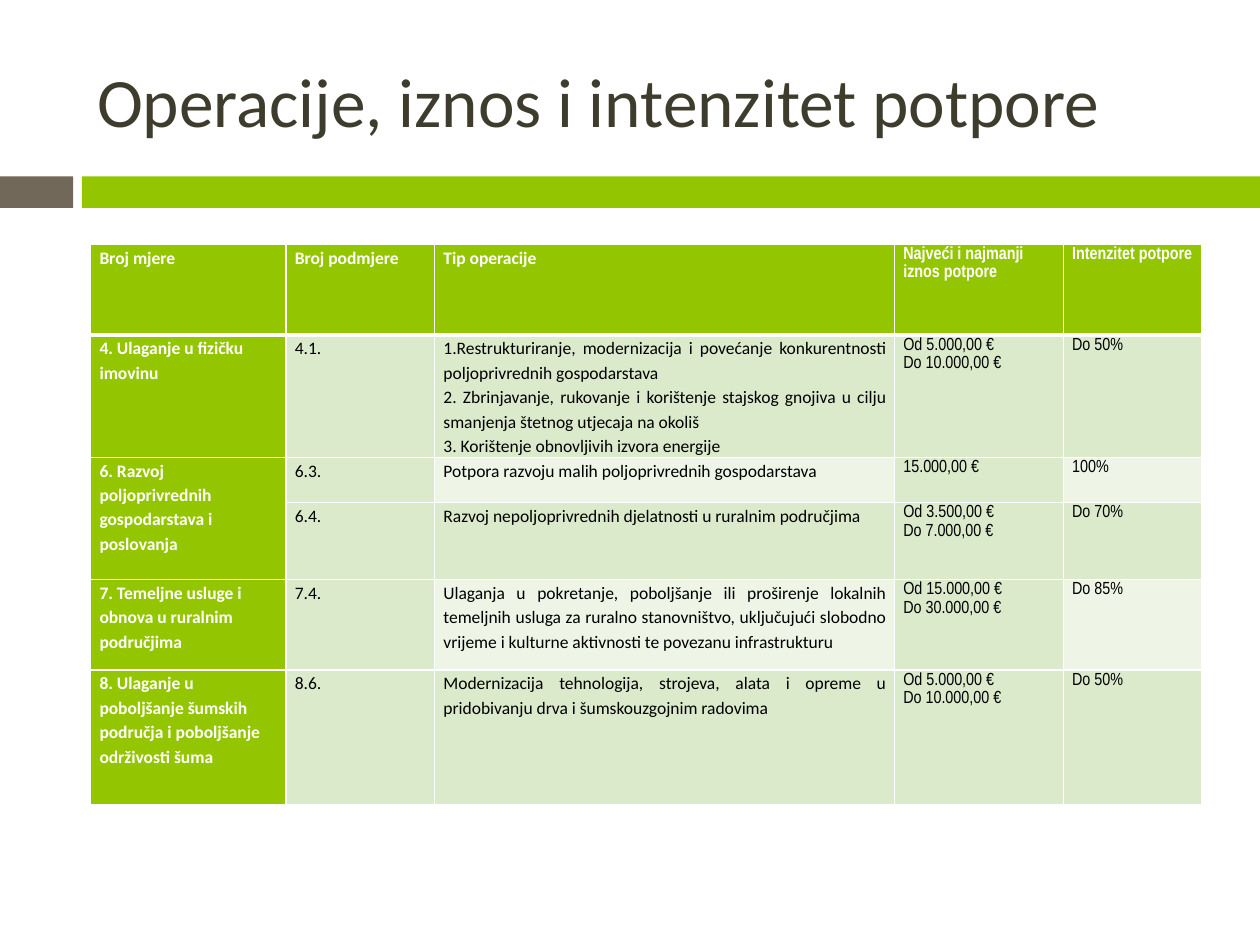
from lxml.etree import SubElement
from pptx import Presentation
from pptx.dml.color import RGBColor
from pptx.enum.shapes import MSO_SHAPE
from pptx.enum.text import MSO_ANCHOR, PP_ALIGN
from pptx.oxml.ns import qn
from pptx.util import Inches, Pt

COLORS = {"green": "94C600", "brown": "71685A", "title": "3E3D2D", "white": "FFFFFF",
          "black": "000000", "band": "DCEACC", "light": "EEF5E7"}
TITLE = "Operacije, iznos i intenzitet potpore"
BARS = [(0, 0.58, "brown"), (0.65, 9.35, "green")]
COLS = [1.55, 1.18, 3.65, 1.34, 1.1]
HEIGHTS = [0.72, 0.97, 0.36, 0.61, 0.72, 1.07]
ROWS = [
    ["Broj mjere", "Broj podmjere", "Tip operacije", "Najveći i najmanji iznos potpore",
     "Intenzitet potpore"],
    ["4. Ulaganje u fizičku imovinu", "4.1.",
     "1.Restrukturiranje, modernizacija i povećanje konkurentnosti poljoprivrednih gospodarstava\n"
     "2. Zbrinjavanje, rukovanje i korištenje stajskog gnojiva u cilju smanjenja štetnog utjecaja "
     "na okoliš\n3. Korištenje obnovljivih izvora energije",
     "Od 5.000,00 €\nDo 10.000,00 €", "Do 50%"],
    ["6. Razvoj poljoprivrednih gospodarstava i poslovanja", "6.3.",
     "Potpora razvoju malih poljoprivrednih gospodarstava", "15.000,00 €", "100%"],
    [None, "6.4.", "Razvoj nepoljoprivrednih djelatnosti u ruralnim područjima",
     "Od 3.500,00 €\nDo 7.000,00 €", "Do 70%"],
    ["7. Temeljne usluge i obnova u ruralnim područjima", "7.4.",
     "Ulaganja u pokretanje, poboljšanje ili proširenje lokalnih temeljnih usluga za ruralno "
     "stanovništvo, uključujući slobodno vrijeme i kulturne aktivnosti te povezanu infrastrukturu",
     "Od 15.000,00 €\nDo 30.000,00 €", "Do 85%"],
    ["8. Ulaganje u poboljšanje šumskih područja i poboljšanje održivosti šuma", "8.6.",
     "Modernizacija tehnologija, strojeva, alata i opreme u pridobivanju drva i "
     "šumskouzgojnim radovima",
     "Od 5.000,00 €\nDo 10.000,00 €", "Do 50%"],
]
LIGHT_ROWS, LIGHT_COLS = (2, 4), (2, 4)


def rgb(name):
    return RGBColor.from_string(COLORS[name])


def set_font(p, name, size, color, bold=False):
    p.font.name, p.font.size, p.font.bold = name, Pt(size), bold
    p.font.color.rgb = rgb(color)


def set_borders(cell, top, bottom):
    tcPr = cell._tc.get_or_add_tcPr()
    for side, width in (("L", 1), ("R", 1), ("T", top), ("B", bottom)):
        ln = SubElement(tcPr, qn(f"a:ln{side}"), w=str(Pt(width)))
        SubElement(SubElement(ln, qn("a:solidFill")), qn("a:srgbClr"), val=COLORS["white"])


def fill_cell(cell, row, col, text):
    head = row == 0 or col == 0
    set_borders(cell, 3 if row == 1 else 1, 3 if row == 0 else 1)
    light = row in LIGHT_ROWS and col in LIGHT_COLS
    cell.fill.solid()
    cell.fill.fore_color.rgb = rgb("green" if head else "light" if light else "band")
    cell.margin_left = cell.margin_right = Inches(0.07)
    cell.margin_top = cell.margin_bottom = 0
    if text is None:
        return
    cell.text_frame.text = text
    ragged = (col == 0 and row > 0) or (row == 0 and col > 2)
    for p in cell.text_frame.paragraphs:
        p.alignment = PP_ALIGN.LEFT if ragged else PP_ALIGN.JUSTIFY
        p.line_spacing = 1.15
        set_font(p, "Arial Narrow" if col > 2 else "Calibri", 10,
                 "white" if head else "black", head)


def main():
    """Build the slide on support operations, amounts and intensity."""
    prs = Presentation()
    prs.slide_width, prs.slide_height = Inches(10), Inches(7.5)
    s = prs.slides.add_slide(prs.slide_layouts[5])

    title = s.shapes.title
    title.left, title.top, title.width, title.height = map(Inches, (0.67, 0.25, 8.92, 1.08))
    tf = title.text_frame
    tf.text = TITLE
    tf.vertical_anchor = MSO_ANCHOR.MIDDLE
    tf.paragraphs[0].alignment = PP_ALIGN.LEFT
    set_font(tf.paragraphs[0], "Calibri", 39.6, "title")

    for left, width, color in BARS:
        bar = s.shapes.add_shape(MSO_SHAPE.RECTANGLE, Inches(left), Inches(1.4),
                                 Inches(width), Inches(0.25))
        bar.shadow.inherit = False
        bar.fill.solid()
        bar.fill.fore_color.rgb = rgb(color)
        bar.line.fill.background()

    table = s.shapes.add_table(len(ROWS), len(COLS), Inches(0.72), Inches(1.94),
                               Inches(sum(COLS)), Inches(sum(HEIGHTS))).table
    for column, width in zip(table.columns, COLS):
        column.width = Inches(width)
    for r, (texts, height) in enumerate(zip(ROWS, HEIGHTS)):
        table.rows[r].height = Inches(height)
        for c, text in enumerate(texts):
            fill_cell(table.cell(r, c), r, c, text)
    table.cell(2, 0).merge(table.cell(3, 0))

    prs.save("out.pptx")


if __name__ == "__main__":
    main()
